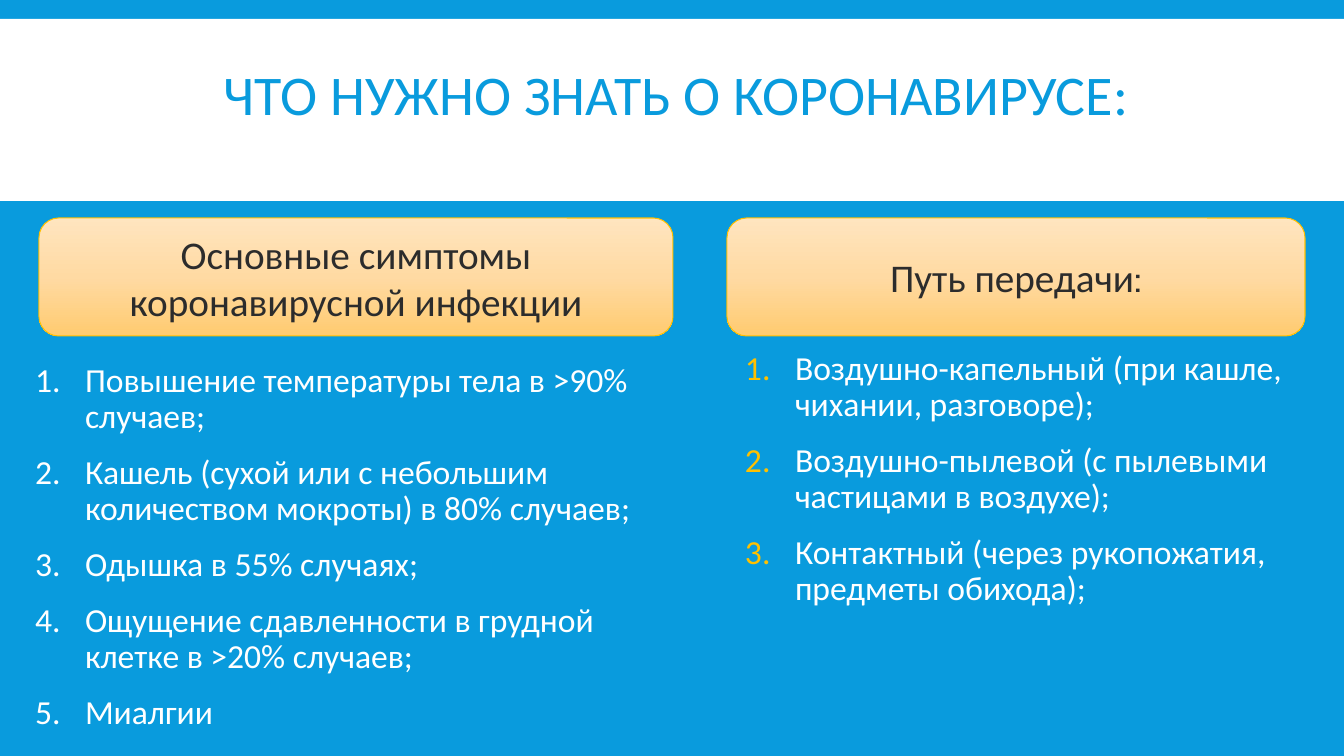
from pptx import Presentation
from pptx.dml.color import RGBColor
from pptx.enum.shapes import MSO_SHAPE as SHAPE
from pptx.enum.text import MSO_ANCHOR as ANCHOR, MSO_AUTO_SIZE as AUTO, PP_ALIGN as ALIGN
from pptx.oxml import parse_xml
from pptx.oxml.ns import nsdecls
from pptx.util import Pt

TITLE = "ЧТО НУЖНО ЗНАТЬ О КОРОНАВИРУСЕ:"
# Boxes are left, top, width, height in px
BAND_BOX = (0, 19, 1344, 182)
TITLE_BOX = (25, 18, 1302, 160)
COLUMNS = [
    dict(
        heading=[("Основные симптомы коронавирусной инфекции", "Calibri")],
        card=(39, 218, 634, 118),
        items=[
            "Повышение температуры тела в >90% случаев;",
            "Кашель (сухой или с небольшим количеством мокроты) в 80% случаев;",
            "Одышка в 55% случаях;",
            "Ощущение сдавленности в грудной клетке в >20% случаев;",
            "Миалгии",
        ],
        body=(25, 358, 660, 398), inset=10, number="white",
    ),
    dict(
        heading=[("Путь передачи", "Calibri"), (":", "Cabin")],
        card=(727, 218, 578, 118),
        items=[
            "Воздушно-капельный (при кашле, чихании, разговоре);",
            "Воздушно-пылевой (с пылевыми частицами в воздухе);",
            "Контактный (через рукопожатия, предметы обихода);",
        ],
        body=(745, 346, 540, 368), inset=0, number="gold",
    ),
]
COLORS = dict(blue="099BDD", white="FFFFFF", gold="FFC000", dark="2C2C2C")
CARD_GRADIENT = [(0, "FFE5BF"), (50, "FFDAA3"), (100, "FFCB70")]
INDENT = 50


def px(n):
    return round(n * 914400 / 100.8)


def rgb(name):
    return RGBColor.from_string(COLORS[name])


def set_font(p, size, color):
    p.font.name, p.font.size = "Calibri", Pt(size)
    p.font.color.rgb = rgb(color)


def add_card(shapes, box, heading):
    sp = shapes.add_shape(SHAPE.ROUNDED_RECTANGLE, *map(px, box))
    sp.shadow.inherit = False
    stops = "".join(f'<a:gs pos="{pos * 1000}"><a:srgbClr val="{c}"/></a:gs>'
                    for pos, c in CARD_GRADIENT)
    gradient = parse_xml(f'<a:gradFill {nsdecls("a")}><a:gsLst>{stops}</a:gsLst>'
                         '<a:lin ang="5400000" scaled="0"/></a:gradFill>')
    sp.element.spPr.insert(2, gradient)  # right after the geometry
    sp.line.color.rgb, sp.line.width = rgb("gold"), Pt(0.75)
    tf = sp.text_frame
    tf.word_wrap, tf.vertical_anchor = True, ANCHOR.MIDDLE
    p = tf.paragraphs[0]
    p.alignment = ALIGN.CENTER
    set_font(p, 28, "dark")
    for text, font in heading:
        r = p.add_run()
        r.text = text
        r.font.name, r.font.size = font, Pt(28)
        r.font.color.rgb = rgb("dark")


def add_numbered_list(shapes, box, items, inset, number):
    tf = shapes.add_textbox(*map(px, box)).text_frame
    tf.word_wrap = True
    tf.margin_left = tf.margin_right = px(inset)
    for i, item in enumerate(items):
        p = tf.add_paragraph() if i else tf.paragraphs[0]
        p.text = item
        p.line_spacing, p.space_before, p.space_after = 0.9, Pt(12), Pt(2)
        set_font(p, 24, "white")
        pPr = p._p.get_or_add_pPr()
        pPr.set("marL", str(px(INDENT)))
        pPr.set("indent", str(-px(INDENT)))
        bullet = (f'<a:buClr {nsdecls("a")}><a:srgbClr val="{COLORS[number]}"/></a:buClr>',
                  f'<a:buAutoNum {nsdecls("a")} type="arabicPeriod"/>')
        at = pPr.index(pPr.find("{*}spcAft")) + 1
        for offset, xml in enumerate(bullet):
            pPr.insert(at + offset, parse_xml(xml))


def main():
    prs = Presentation()
    prs.slide_width, prs.slide_height = px(1344), px(756)
    slide = prs.slides.add_slide(prs.slide_layouts[5])
    slide.background.fill.solid()
    slide.background.fill.fore_color.rgb = rgb("blue")
    shapes = slide.shapes

    band = shapes.add_shape(SHAPE.RECTANGLE, *map(px, BAND_BOX))
    band.shadow.inherit = False
    band.fill.solid()
    band.fill.fore_color.rgb = rgb("white")
    band.line.fill.background()

    title = shapes.title
    title.element.getparent().append(title.element)  # in front of the band
    title.left, title.top, title.width, title.height = map(px, TITLE_BOX)
    tf = title.text_frame
    tf.text = TITLE
    tf.word_wrap, tf.auto_size, tf.vertical_anchor = True, AUTO.NONE, ANCHOR.MIDDLE
    p = tf.paragraphs[0]
    p.alignment, p.line_spacing = ALIGN.CENTER, 0.85
    set_font(p, 40, "blue")

    for col in COLUMNS:
        add_card(shapes, col["card"], col["heading"])
        add_numbered_list(shapes, col["body"], col["items"], col["inset"], col["number"])
    prs.save("out.pptx")


if __name__ == "__main__":
    main()
